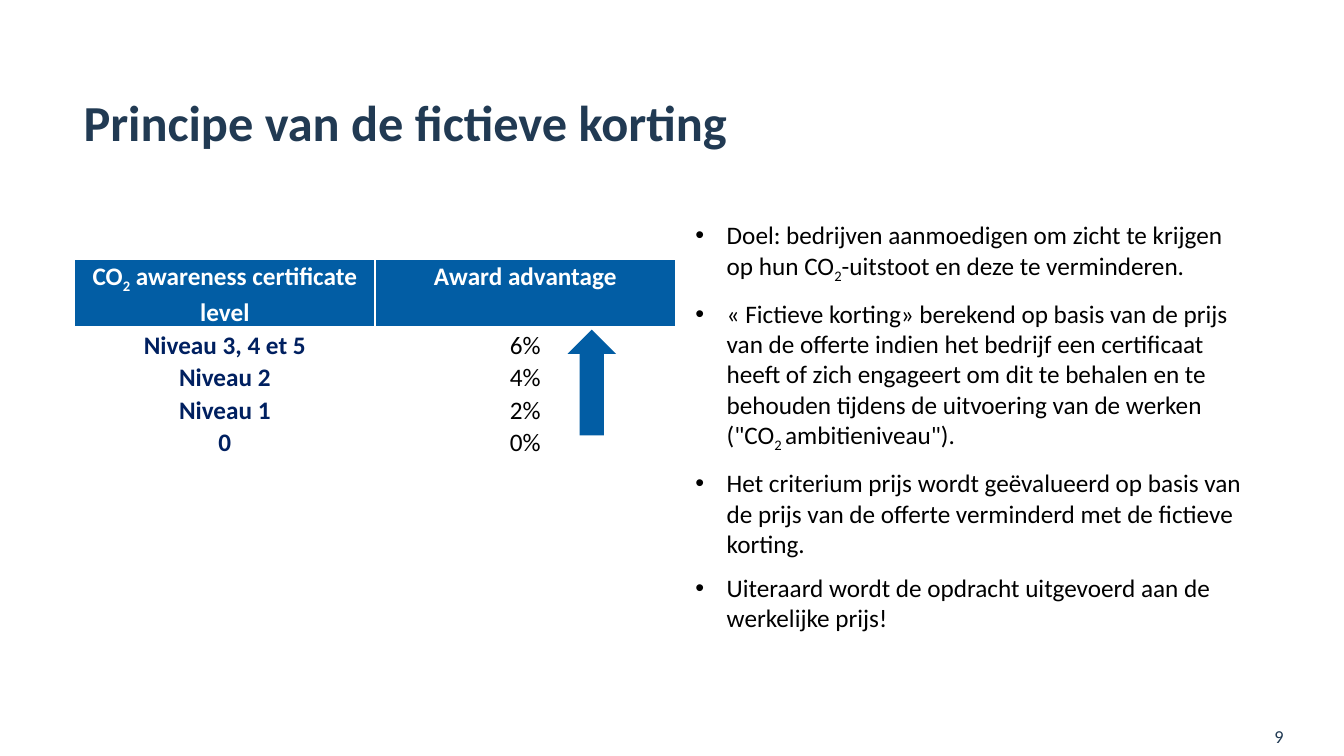
from dataclasses import dataclass

from lxml.etree import SubElement
from pptx import Presentation
from pptx.dml.color import RGBColor
from pptx.enum.shapes import MSO_SHAPE
from pptx.enum.text import MSO_ANCHOR, PP_ALIGN
from pptx.oxml.ns import qn
from pptx.util import Inches, Pt


@dataclass(frozen=True)
class Theme:
    font: str = "Calibri"
    navy: str = "213A53"
    blue: str = "025DA4"
    level: str = "002060"
    black: str = "000000"
    white: str = "FFFFFF"
    title_size: int = 36
    body_size: int = 18
    number_size: int = 13


class SlideBuilder:
    def __init__(self, slide, theme):
        self.s = slide
        self.theme = theme

    def add_runs(self, p, pieces, size, color, bold=False):
        """Add the pieces as runs; every second piece is a subscript."""
        for i, piece in enumerate(pieces):
            r = p.add_run()
            r.text = piece
            r.font.name = self.theme.font
            r.font.size = Pt(size)
            r.font.bold = bold
            r.font.color.rgb = RGBColor.from_string(color)
            if i % 2:
                r._r.get_or_add_rPr().set("baseline", "-25000")

    def text_frame(self, x, y, w, h, anchor=MSO_ANCHOR.TOP):
        sp = self.s.shapes.add_textbox(Inches(x), Inches(y), Inches(w), Inches(h))
        tf = sp.text_frame
        tf.word_wrap = True
        tf.vertical_anchor = anchor
        return tf

    def line(self, text, box, size, bold=False, anchor=MSO_ANCHOR.TOP, spacing=1.0):
        p = self.text_frame(*box, anchor).paragraphs[0]
        p.line_spacing = spacing
        self.add_runs(p, [text], size, self.theme.navy, bold)

    def bullets(self, items, box, indent=0.31):
        tf = self.text_frame(*box)
        for i, pieces in enumerate(items):
            p = tf.add_paragraph() if i else tf.paragraphs[0]
            if i:
                p.space_before = Pt(10)
            pPr = p._p.get_or_add_pPr()
            pPr.set("marL", str(Inches(indent)))
            pPr.set("indent", str(-Inches(indent)))
            SubElement(pPr, qn("a:buFont"), typeface="Arial")
            SubElement(pPr, qn("a:buChar"), char="•")
            self.add_runs(p, pieces, self.theme.body_size, self.theme.black)

    def borders(self, cell, bottom):
        tcPr = cell._tc.get_or_add_tcPr()
        widths = {"a:lnL": 1, "a:lnR": 1, "a:lnT": 1, "a:lnB": bottom}
        for i, (tag, width) in enumerate(widths.items()):
            ln = SubElement(tcPr, qn(tag), w=str(Pt(width)))
            fill = SubElement(ln, qn("a:solidFill"))
            SubElement(fill, qn("a:srgbClr"), val=self.theme.white)
            tcPr.insert(i, ln)

    def table(self, rows, x, y, col_w, header_h, row_h):
        t = self.theme
        n_cols = len(rows[0])
        height = header_h + row_h * (len(rows) - 1)
        table = self.s.shapes.add_table(
            len(rows), n_cols, Inches(x), Inches(y),
            Inches(col_w * n_cols), Inches(height)).table
        table.first_row = True
        table.horz_banding = False
        for i, row in enumerate(rows):
            table.rows[i].height = Inches(row_h if i else header_h)
            for j, pieces in enumerate(row):
                cell = table.cell(i, j)
                cell.margin_left = cell.margin_right = Inches(0.07)
                cell.margin_top = cell.margin_bottom = 0
                if i == 0:
                    cell.fill.solid()
                    cell.fill.fore_color.rgb = RGBColor.from_string(t.blue)
                    color = t.white
                else:
                    cell.fill.background()
                    color = t.black if j else t.level
                self.borders(cell, bottom=1 if i else 3)
                p = cell.text_frame.paragraphs[0]
                p.alignment = PP_ALIGN.CENTER
                p.line_spacing = 1.07
                self.add_runs(p, pieces, t.body_size, color, bold=i == 0 or j == 0)

    def up_arrow(self, x, y, w, h):
        sp = self.s.shapes.add_shape(
            MSO_SHAPE.DOWN_ARROW, Inches(x), Inches(y), Inches(w), Inches(h))
        sp.rotation = 180
        sp.shadow.inherit = False
        sp.fill.solid()
        sp.fill.fore_color.rgb = RGBColor.from_string(self.theme.blue)
        sp.line.fill.background()


BULLETS = [
    ["Doel: bedrijven aanmoedigen om zicht te krijgen op hun CO", "2",
     "-uitstoot en deze te verminderen."],
    ["« Fictieve korting» berekend op basis van de prijs van de offerte "
     "indien het bedrijf een certificaat heeft of zich engageert om dit te "
     "behalen en te behouden tijdens de uitvoering van de werken (\"CO",
     "2 ", "ambitieniveau\")."],
    ["Het criterium prijs wordt geëvalueerd op basis van de prijs van de "
     "offerte verminderd met de fictieve korting."],
    ["Uiteraard wordt de opdracht uitgevoerd aan de werkelijke prijs!"],
]

ADVANTAGES = [
    (["CO", "2", " awareness certificate level"], ["Award advantage"]),
    (["Niveau 3, 4 et 5"], ["6%"]),
    (["Niveau 2"], ["4%"]),
    (["Niveau 1"], ["2%"]),
    (["0"], ["0%"]),
]


def main():
    prs = Presentation()
    prs.slide_width, prs.slide_height = Inches(13.33), Inches(7.5)
    theme = Theme()
    b = SlideBuilder(prs.slides.add_slide(prs.slide_layouts[6]), theme)

    # Explanation on the right
    b.bullets(BULLETS, (6.8, 2.13, 5.74, 3.92))

    # Slide number and title
    b.line("9", (12.54, 7.1, 0.62, 0.4), theme.number_size, anchor=MSO_ANCHOR.MIDDLE)
    b.line("Principe van de fictieve korting", (0.73, 0.92, 11.88, 0.52),
           theme.title_size, bold=True, spacing=0.9)

    # Advantage per certificate level, with rising arrow
    b.table(ADVANTAGES, 0.74, 2.57, col_w=2.98, header_h=0.66, row_h=0.32)
    b.up_arrow(5.63, 3.27, 0.48, 1.05)

    prs.save("out.pptx")


if __name__ == "__main__":
    main()
